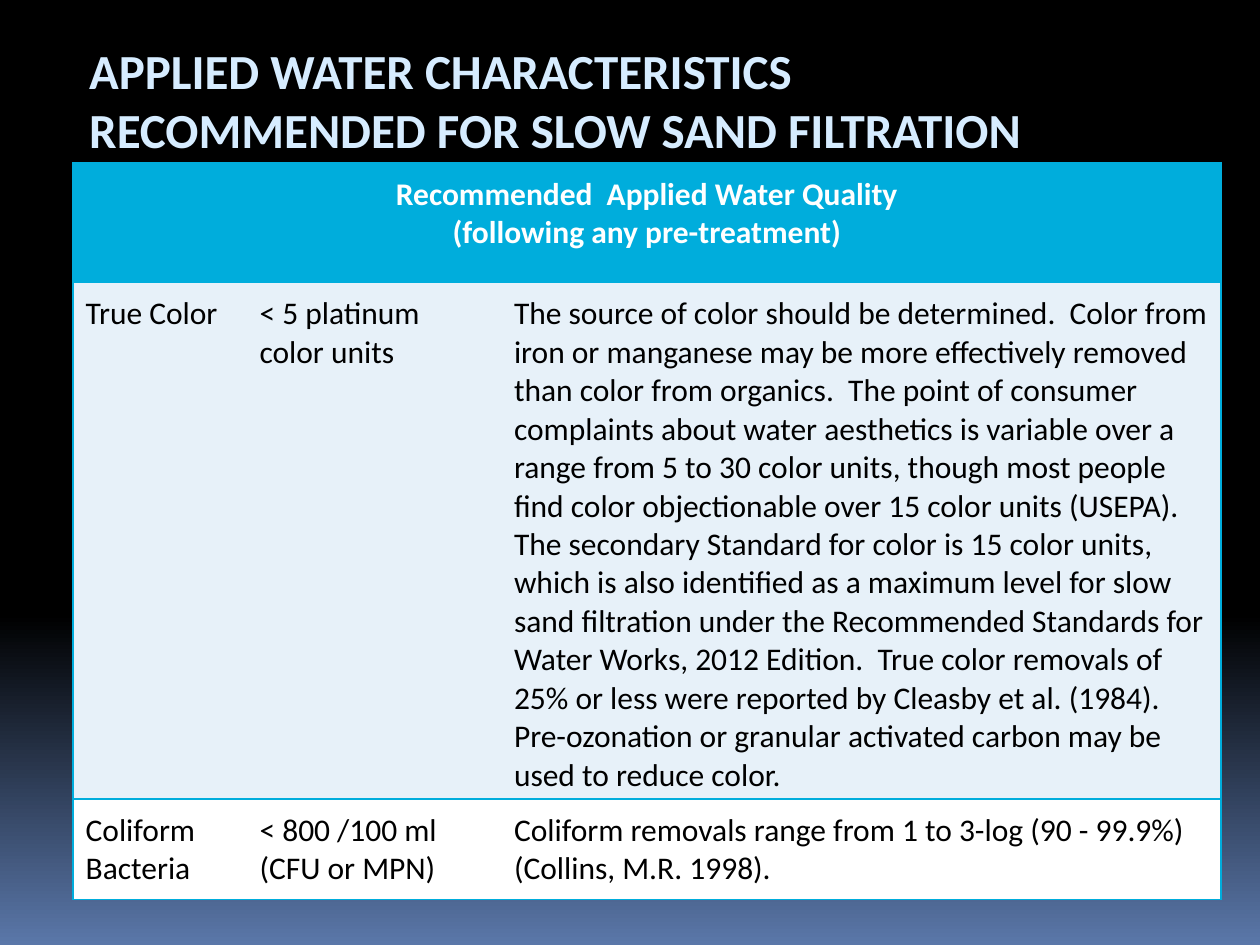
from dataclasses import dataclass
from typing import NamedTuple

from lxml.etree import SubElement
from pptx import Presentation
from pptx.dml.color import RGBColor
from pptx.enum.text import PP_ALIGN
from pptx.oxml.ns import qn
from pptx.util import Inches, Pt


@dataclass(frozen=True)
class Theme:
    font: str = "Calibri"
    title_size: int = 28
    table_size: int = 18
    title: str = "D6ECFF"
    accent: str = "00ADDC"
    band: str = "E7F1F9"
    white: str = "FFFFFF"
    black: str = "000000"
    horizon: str = "5A77A9"


class TableRow(NamedTuple):
    height: float  # percent of the slide's height
    fill: str
    texts: tuple[str, ...]


THEME = Theme()
SLIDE_WIDTH, SLIDE_HEIGHT = Inches(10), Inches(7.5)
COLUMN_WIDTHS = (13.8, 20.2, 57.1)  # percent of the slide's width

TITLE = "APPLIED WATER CHARACTERISTICS\nRECOMMENDED FOR SLOW SAND FILTRATION"
ROWS = (
    TableRow(12.67, THEME.accent, (
        "Recommended  Applied Water Quality\n(following any pre-treatment)",
    )),
    TableRow(54.67, THEME.band, (
        "True Color",
        "< 5 platinum color units",
        "The source of color should be determined.  Color from iron or manganese "
        "may be more effectively removed than color from organics.  The point of "
        "consumer complaints about water aesthetics is variable over a range from "
        "5 to 30 color units, though most people find color objectionable over 15 "
        "color units (USEPA).  The secondary Standard for color is 15 color units, "
        "which is also identified as a maximum level for slow sand filtration under "
        "the Recommended Standards for Water Works, 2012 Edition.  True color "
        "removals of 25% or less were reported by Cleasby et al. (1984).  "
        "Pre-ozonation or granular activated carbon may be used to reduce color.",
    )),
    TableRow(10.67, THEME.white, (
        "Coliform Bacteria",
        "< 800 /100 ml\n(CFU or MPN)",
        "Coliform removals range from 1 to 3-log (90 - 99.9%) (Collins, M.R. 1998).",
    )),
)


def across(percent: float) -> int:
    return round(SLIDE_WIDTH * percent / 100)


def down(percent: float) -> int:
    return round(SLIDE_HEIGHT * percent / 100)


def write(frame, text: str, size: int, color: str, bold: bool = False,
          align: PP_ALIGN = PP_ALIGN.LEFT) -> None:
    frame.text = text
    for para in frame.paragraphs:
        para.alignment = align
        for span in para.runs:
            span.font.name = THEME.font
            span.font.size = Pt(size)
            span.font.bold = bold
            span.font.color.rgb = RGBColor.from_string(color)


def set_borders(cell, visible: str) -> None:
    """Rule the named sides (L, R, T, B) and clear the others."""
    properties = cell._tc.get_or_add_tcPr()
    for index, side in enumerate("LRTB"):
        line = SubElement(properties, qn(f"a:ln{side}"), w=str(Pt(1)))
        if side in visible:
            fill = SubElement(line, qn("a:solidFill"))
            SubElement(fill, qn("a:srgbClr"), val=THEME.accent)
        else:
            SubElement(line, qn("a:noFill"))
        # Borders come before the fill in the schema
        properties.insert(index, line)


def paint_background(slide) -> None:
    fill = slide.background.fill
    fill.gradient()
    fill.gradient_angle = 270
    stops = ((0.65, THEME.black), (1, THEME.horizon))
    for stop, (position, color) in zip(fill.gradient_stops, stops):
        stop.position = position
        stop.color.rgb = RGBColor.from_string(color)


def add_title(slide) -> None:
    box = slide.shapes.add_textbox(across(6.1), down(3.6), across(83.8), down(13.87))
    box.text_frame.word_wrap = True
    write(box.text_frame, TITLE, THEME.title_size, THEME.title, bold=True)


def add_quality_table(slide) -> None:
    table = slide.shapes.add_table(
        len(ROWS), len(COLUMN_WIDTHS), across(5.8), down(17.2),
        across(sum(COLUMN_WIDTHS)), down(sum(row.height for row in ROWS)),
    ).table
    table.horz_banding = False
    for column, width in zip(table.columns, COLUMN_WIDTHS):
        column.width = across(width)

    last = len(COLUMN_WIDTHS) - 1
    for row_index, row in enumerate(ROWS):
        table.rows[row_index].height = down(row.height)
        is_header = row_index == 0
        for column_index in range(len(COLUMN_WIDTHS)):
            cell = table.cell(row_index, column_index)
            cell.fill.solid()
            cell.fill.fore_color.rgb = RGBColor.from_string(row.fill)
            cell.margin_left = cell.margin_right = cell.margin_top = Inches(0.1)
            cell.margin_bottom = Inches(0.04)
            sides = "TB" + "L" * (column_index == 0) + "R" * (column_index == last)
            set_borders(cell, "LRTB" if is_header else sides)
        for column_index, text in enumerate(row.texts):
            write(table.cell(row_index, column_index).text_frame, text,
                  THEME.table_size, THEME.white if is_header else THEME.black,
                  bold=is_header,
                  align=PP_ALIGN.CENTER if is_header else PP_ALIGN.LEFT)
    table.cell(0, 0).merge(table.cell(0, last))


def main() -> None:
    deck = Presentation()
    deck.slide_width, deck.slide_height = SLIDE_WIDTH, SLIDE_HEIGHT
    page = deck.slides.add_slide(deck.slide_layouts[6])
    paint_background(page)
    add_title(page)
    add_quality_table(page)
    deck.save("out.pptx")


if __name__ == "__main__":
    main()
